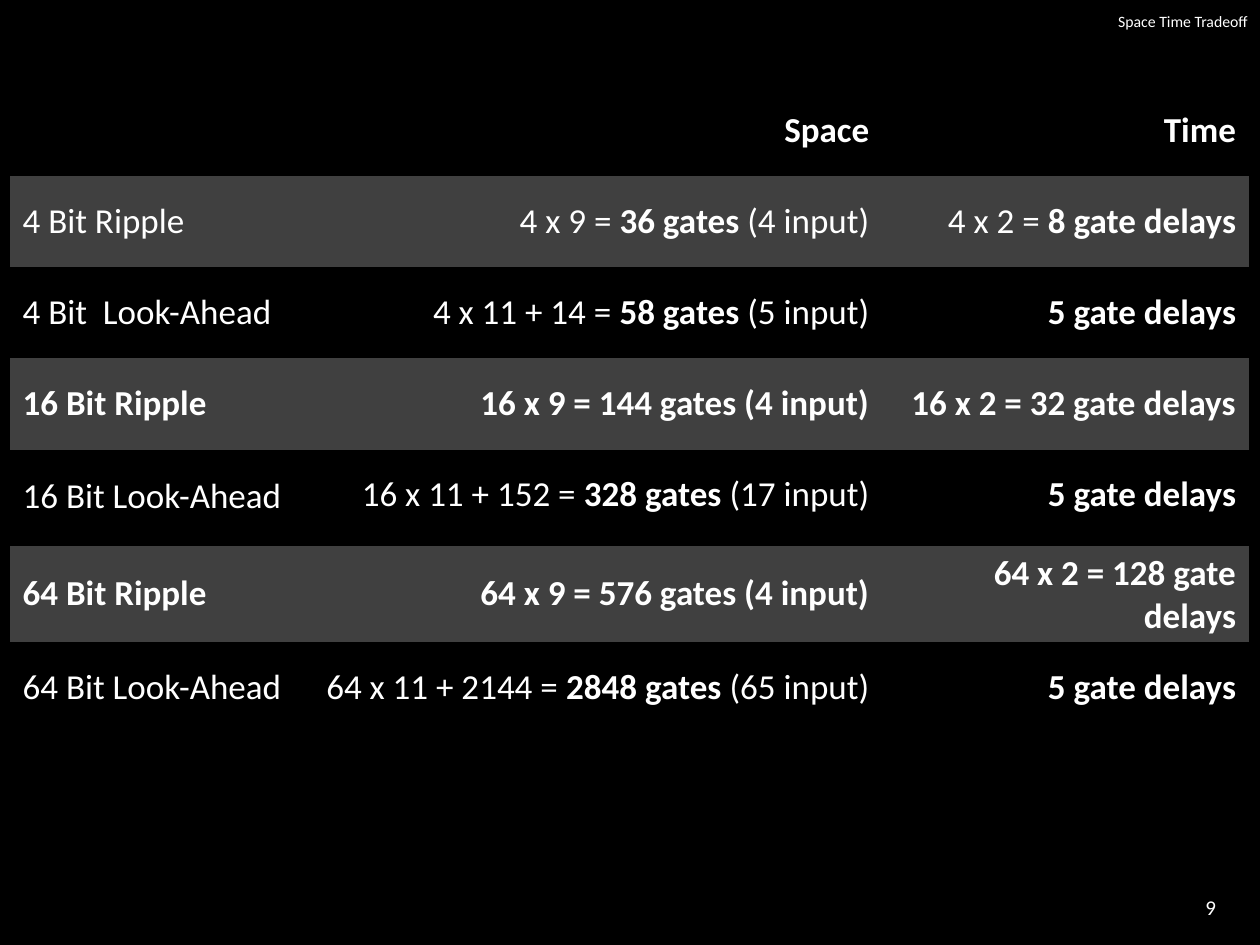
"""Build a slide that compares gate counts and delays of ripple and look-ahead adders."""
from pptx import Presentation
from pptx.dml.color import RGBColor
from pptx.enum.text import MSO_ANCHOR, PP_ALIGN
from pptx.oxml.ns import qn
from pptx.util import Inches, Pt

LEFT, RIGHT = PP_ALIGN.LEFT, PP_ALIGN.RIGHT
MIDDLE = MSO_ANCHOR.MIDDLE
BLACK = RGBColor(0x00, 0x00, 0x00)
WHITE = RGBColor(0xFF, 0xFF, 0xFF)
GRAY = RGBColor(0x40, 0x40, 0x40)
FONT = "Calibri"
PLAIN_TABLE_STYLE = "{2D5ABB26-0587-4C30-8999-92F81FD0307C}"

SLIDE_WIDTH, SLIDE_HEIGHT = 10, 7.5
TABLE_LEFT = 0.08
COLUMN_WIDTHS = (2.37, 4.55, 2.91)
ROW_HEIGHT = 1.45 / 2
BODY_SIZE = 20

LABELS = (
    ("9", 12, (8.92, 7, 0.83, 0.4)),
    ("Space Time Tradeoff", 9, (6.17, 0, 3.83, 0.33)),
)

FIVE_DELAYS = [("5 gate delays", True)]
RIPPLE_16 = [("16 Bit Ripple", True)]

TABLES = (
    (0.67, (
        ([], [("Space", True)], [("Time", True)]),
        ([("4 Bit Ripple", False)],
         [("4 x 9 = ", False), ("36 gates", True), (" (4 input)", False)],
         [("4 x 2 = ", False), ("8 gate delays", True)]),
        ([("4 Bit  Look-Ahead", False)],
         [("4 x 11 + 14 = ", False), ("58 gates ", True), ("(5 input)", False)],
         FIVE_DELAYS),
    )),
    (2.85, (
        (RIPPLE_16, [], []),
        ([("16 Bit Look-Ahead", False)], [], []),
    )),
    (4.33, (
        ([("64 Bit Ripple", True)],
         [("64 x 9 = 576 gates (4 input)", True)],
         [("64 x 2 = 128 gate delays", True)]),
        ([("64 Bit Look-Ahead", False)],
         [("64 x 11 + 2144 = ", False), ("2848 gates ", True), ("(65 input)", False)],
         FIVE_DELAYS),
    )),
    (2.84, (
        (RIPPLE_16,
         [("16 x 9 = 144 gates (4 input)", True)],
         [("16 x 2 = 32 gate delays", True)]),
        ([],
         [("16 x 11 + 152 = ", False), ("328 gates ", True), ("(17 input)", False)],
         FIVE_DELAYS),
    )),
)


def write_runs(paragraph, runs, size, alignment):
    paragraph.alignment = alignment
    for text, bold in runs:
        run = paragraph.add_run()
        run.text = text
        run.font.name = FONT
        run.font.size = Pt(size)
        run.font.bold = bold
        run.font.color.rgb = WHITE


def add_label(slide, text, size, box):
    frame = slide.shapes.add_textbox(*map(Inches, box)).text_frame
    frame.word_wrap = True
    frame.vertical_anchor = MIDDLE
    write_runs(frame.paragraphs[0], [(text, False)], size, RIGHT)


def add_comparison(slide, top, rows):
    shape = slide.shapes.add_table(
        len(rows), len(COLUMN_WIDTHS), Inches(TABLE_LEFT), Inches(top),
        Inches(sum(COLUMN_WIDTHS)), Inches(ROW_HEIGHT * len(rows)))
    for style in shape.element.iter(qn("a:tableStyleId")):
        style.text = PLAIN_TABLE_STYLE
    table = shape.table
    table.first_row = table.horz_banding = False
    for column, width in zip(table.columns, COLUMN_WIDTHS):
        column.width = Inches(width)
    for row_index, row in enumerate(rows):
        table.rows[row_index].height = Inches(ROW_HEIGHT)
        is_ripple = any("Ripple" in text for text, bold in row[0])
        for column_index, runs in enumerate(row):
            cell = table.cell(row_index, column_index)
            cell.vertical_anchor = MIDDLE
            if is_ripple:
                cell.fill.solid()
                cell.fill.fore_color.rgb = GRAY
            else:
                cell.fill.background()
            alignment = RIGHT if column_index else LEFT
            write_runs(cell.text_frame.paragraphs[0], runs, BODY_SIZE, alignment)


def main():
    presentation = Presentation()
    presentation.slide_width = Inches(SLIDE_WIDTH)
    presentation.slide_height = Inches(SLIDE_HEIGHT)
    slide = presentation.slides.add_slide(presentation.slide_layouts[6])
    slide.background.fill.solid()
    slide.background.fill.fore_color.rgb = BLACK
    for text, size, box in LABELS:
        add_label(slide, text, size, box)
    for top, rows in TABLES:
        add_comparison(slide, top, rows)
    presentation.save("out.pptx")


if __name__ == "__main__":
    main()
